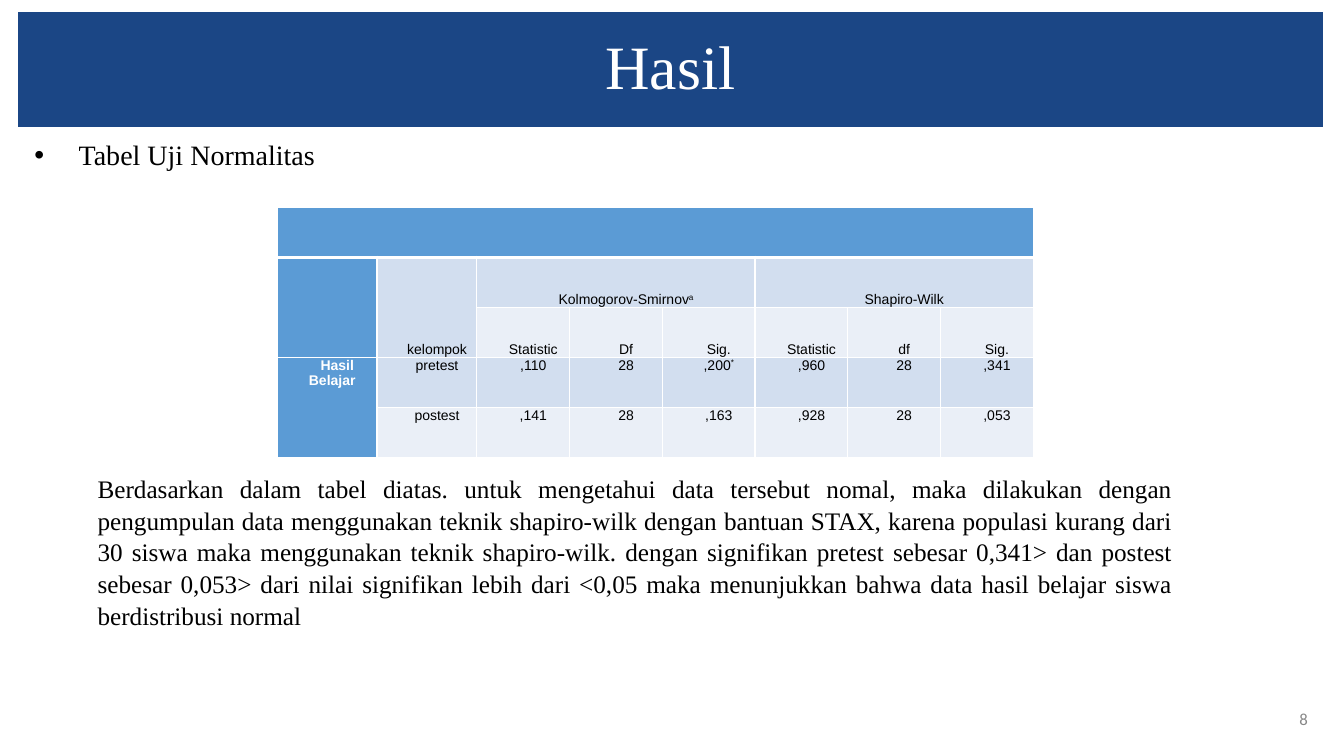
from lxml import etree
from pptx import Presentation
from pptx import util as u
from pptx.dml.color import RGBColor
from pptx.enum import text
from pptx.oxml.ns import qn

PX = 9144  # 100 px to the inch
NAVY = RGBColor(0x1B, 0x46, 0x85)
BLUE = RGBColor(0x5B, 0x9B, 0xD5)
BAND = RGBColor(0xD2, 0xDE, 0xEF)
PALE = RGBColor(0xEA, 0xEF, 0xF7)
WHITE = RGBColor(0xFF, 0xFF, 0xFF)
BLACK = RGBColor(0, 0, 0)
GRAY = RGBColor(0x88, 0x88, 0x88)
SERIF = "Times New Roman"
ALIGN = text.PP_ALIGN
ANCHOR = text.MSO_ANCHOR

ROWS = [
    [""] * 8,
    ["", "kelompok", "Kolmogorov-Smirnov^a", "", "", "Shapiro-Wilk", "", ""],
    ["", "", "Statistic", "Df", "Sig.", "Statistic", "df", "Sig."],
    ["Hasil Belajar", "pretest", ",110", "28", ",200^*", ",960", "28", ",341"],
    ["", "postest", ",141", "28", ",163", ",928", "28", ",053"],
]
# first row, first column, last row, last column
SPANS = [(0, 0, 0, 7), (1, 0, 2, 0), (1, 1, 2, 1), (1, 2, 1, 4),
         (1, 5, 1, 7), (3, 0, 4, 0)]
NOTE = ("Berdasarkan dalam tabel diatas. untuk mengetahui data tersebut nomal, "
        "maka dilakukan dengan pengumpulan data menggunakan teknik shapiro-wilk "
        "dengan bantuan STAX, karena populasi kurang dari 30 siswa maka "
        "menggunakan teknik shapiro-wilk. dengan signifikan pretest sebesar "
        "0,341> dan postest sebesar 0,053> dari nilai signifikan lebih dari "
        "<0,05 maka menunjukkan bahwa data hasil belajar siswa berdistribusi "
        "normal")


def px(n):
    return u.Emu(n * PX)


def place(shape, *box):
    shape.left, shape.top, shape.width, shape.height = map(px, box)


def style(para, face, size, color, align, bold=False):
    para.alignment = align
    font = para.font
    font.name, font.size, font.bold = face, u.Pt(size), bold
    font.color.rgb = color


def indent(para, left, first):
    props = para._p.get_or_add_pPr()
    props.set("marL", str(px(left)))
    props.set("indent", str(px(first)))
    return props


def fill_frame(shape, words, anchor):
    """Put one paragraph in a wrapping frame and return it."""
    frame = shape.text_frame
    frame.word_wrap = True
    frame.auto_size = text.MSO_AUTO_SIZE.NONE
    frame.vertical_anchor = anchor
    para = frame.paragraphs[0]
    para.text = words
    para.space_before = u.Pt(0)
    return para


def add_title(slide):
    title = slide.shapes.title
    place(title, 18, 12, 1294, 114)
    title.fill.solid()
    title.fill.fore_color.rgb = NAVY
    para = fill_frame(title, "Hasil", ANCHOR.MIDDLE)
    para.line_spacing = 0.9
    style(para, SERIF, 44, WHITE, ALIGN.CENTER)


def add_list(slide):
    body = slide.placeholders[1]
    place(body, 18, 135, 1294, 557)
    para = fill_frame(body, "Tabel Uji Normalitas", ANCHOR.TOP)
    props = indent(para, 50, -44)
    etree.SubElement(props, qn("a:buFont"), typeface="Arial")
    etree.SubElement(props, qn("a:buChar"), char="•")
    para.line_spacing = 0.9
    style(para, SERIF, 20, BLACK, ALIGN.LEFT)


def add_text(slide, words, box, look, anchor=ANCHOR.TOP, space=1.0):
    shape = slide.shapes.add_textbox(*map(px, box))
    para = fill_frame(shape, words, anchor)
    para.line_spacing = space
    style(para, *look)


def edge(cell, sides):
    """Draw white borders; sides maps a side letter to points."""
    props = cell._tc.get_or_add_tcPr()
    for spot, side in enumerate("LRTB"):
        line = etree.Element(qn("a:ln" + side), w=str(u.Pt(sides[side])))
        paint = etree.SubElement(line, qn("a:solidFill"))
        etree.SubElement(paint, qn("a:srgbClr"), val=str(WHITE))
        props.insert(spot, line)


def write_cell(cell, words, color, bold, anchor):
    """Write words; what follows ^ is raised."""
    cell.margin_left = cell.margin_right = px(1)
    cell.margin_top = cell.margin_bottom = 0
    cell.vertical_anchor = anchor
    para = cell.text_frame.paragraphs[0]
    main, _, mark = words.partition("^")
    para.add_run().text = main
    if mark:
        run = para.add_run()
        run.text = mark
        run._r.get_or_add_rPr().set("baseline", "30000")
    indent(para, 10, 10)
    para.space_after = u.Pt(4.3)
    style(para, "Arial", 10, color, ALIGN.CENTER, bold)


def add_grid(slide):
    table = slide.shapes.add_table(5, 8, *map(px, (275, 206, 750, 248))).table
    for c, col in enumerate(table.columns):
        col.width = px(99 if c < 2 else 92)
    for row in table.rows:
        row.height = u.Emu(px(248) // 5)
    for r, row in enumerate(ROWS):
        for c, words in enumerate(row):
            cell = table.cell(r, c)
            head = r == 0 or c == 0
            cell.fill.solid()
            cell.fill.fore_color.rgb = BLUE if head else BAND if r % 2 else PALE
            edge(cell, {"L": 1, "R": 1, "T": 3 if r == 1 else 1,
                        "B": 3 if r == 0 else 1})
            if words:
                write_cell(cell, words, WHITE if head else BLACK, head,
                           ANCHOR.BOTTOM if r < 3 else ANCHOR.TOP)
    for top, left, low, right in SPANS:
        table.cell(top, left).merge(table.cell(low, right))


def main():
    deck = Presentation()
    deck.slide_width, deck.slide_height = px(1333), px(750)
    slide = deck.slides.add_slide(deck.slide_layouts[1])
    add_title(slide)
    add_list(slide)
    add_grid(slide)
    add_text(slide, NOTE, (87, 463, 1086, 162),
             (SERIF, 18, BLACK, ALIGN.JUSTIFY), space=1.05)
    add_text(slide, "8", (1250, 693, 57, 40),
             ("Calibri", 12, GRAY, ALIGN.RIGHT), ANCHOR.MIDDLE)
    deck.save("out.pptx")


if __name__ == "__main__":
    main()
